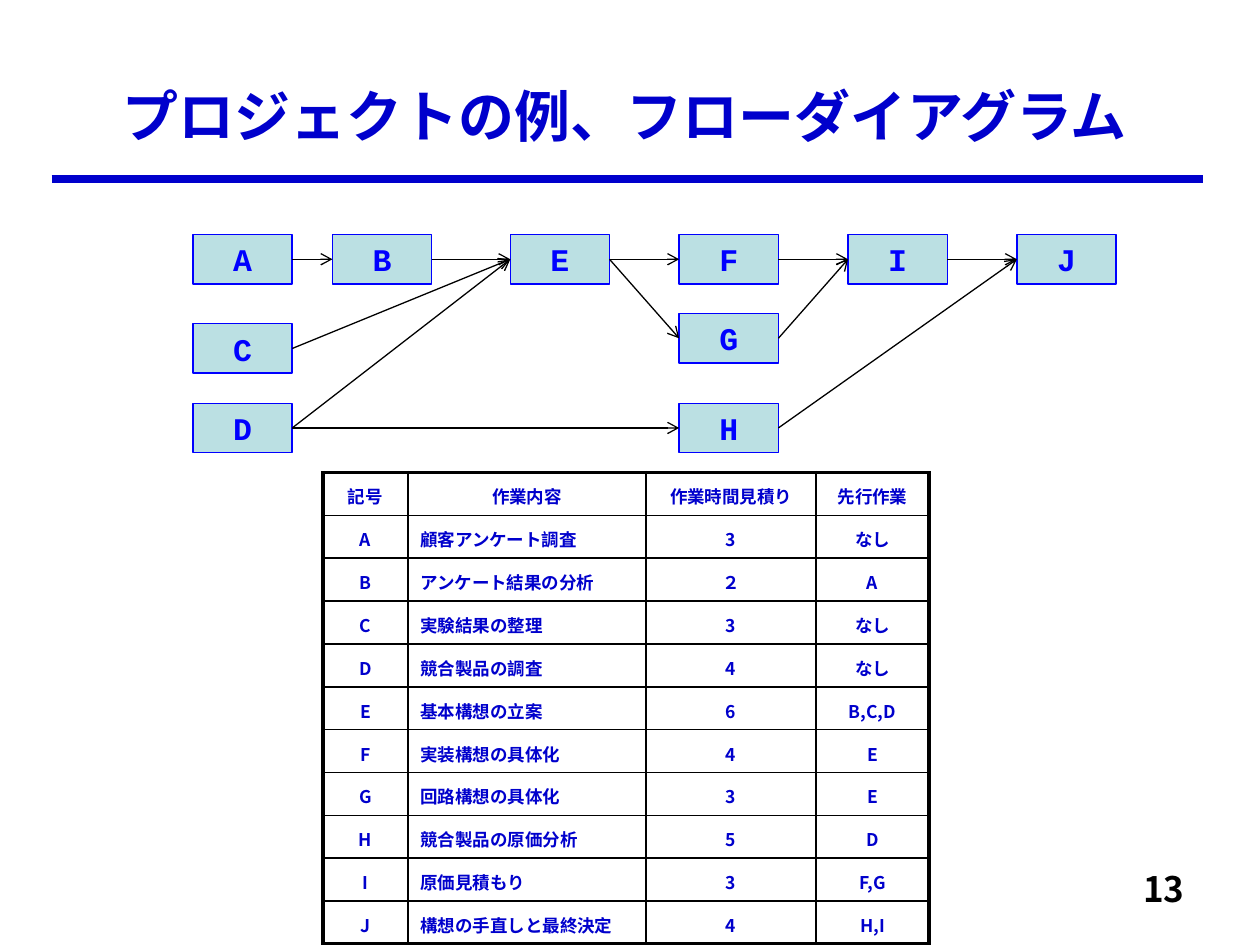
from lxml import etree
from pptx import Presentation, util as u
from pptx.dml.color import RGBColor
from pptx.enum import shapes, text
from pptx.oxml import ns

COLORS = {"navy": "0000CC", "blue": "0000FF", "pale": "BBE0E3", "black": "000000"}
GOTHIC, MONO = "Noto Sans CJK JP", "Courier New"
CENTER, LEFT, RIGHT = text.PP_ALIGN.CENTER, text.PP_ALIGN.LEFT, text.PP_ALIGN.RIGHT

TOP, G_ROW, C_ROW, BOTTOM = 134, 179.2, 185, 230.4
E_LEFT, STEP = 291.6, 96.5
NODES = {
    "A": (110.3, TOP), "C": (110.3, C_ROW), "D": (110.3, BOTTOM), "B": (190, TOP),
    "E": (E_LEFT, TOP), "F": (E_LEFT + STEP, TOP), "I": (E_LEFT + 2 * STEP, TOP),
    "J": (E_LEFT + 3 * STEP, TOP), "G": (E_LEFT + STEP, G_ROW),
    "H": (E_LEFT + STEP, BOTTOM),
}
ARROWS = ["AB", "BE", "EG", "DH", "FI", "IJ", "EF", "GI", "DE", "CE", "HJ"]

COLUMN_WIDTHS = [48.6, 136.1, 97.2, 64.4]
TASKS = [
    ("記号", "作業内容", "作業時間見積り", "先行作業"),
    ("A", "顧客アンケート調査", "3", "なし"),
    ("B", "アンケート結果の分析", "２", "A"),
    ("C", "実験結果の整理", "3", "なし"),
    ("D", "競合製品の調査", "4", "なし"),
    ("E", "基本構想の立案", "6", "B,C,D"),
    ("F", "実装構想の具体化", "4", "E"),
    ("G", "回路構想の具体化", "3", "E"),
    ("H", "競合製品の原価分析", "5", "D"),
    ("I", "原価見積もり", "3", "F,G"),
    ("J", "構想の手直しと最終決定", "4", "H,I"),
]


def rgb(name):
    return RGBColor.from_string(COLORS[name])


def add_child(parent, tag, **attributes):
    return etree.SubElement(parent, ns.qn(tag), **attributes)


class Sheet:
    """The current page and the look shared by its elements."""

    node_size = (56.7, 28.3)
    row_height = 24.5
    thin, thick = 1, 2.25

    def __init__(self, page):
        self.page = page

    def add_words(self, frame, words, size, color, font=GOTHIC, align=CENTER):
        para = frame.paragraphs[0]
        para.alignment = align
        span = para.add_run()
        span.text = words
        span.font.name = font
        span.font.size = u.Pt(size)
        span.font.bold = True
        span.font.color.rgb = rgb(color)
        add_child(span.font._element, "a:ea", typeface=font)
        return para

    def title(self, words, left, top, width, height):
        box = self.page.shapes.title
        box.left, box.top = u.Pt(left), u.Pt(top)
        box.width, box.height = u.Pt(width), u.Pt(height)
        box.text_frame.auto_size = text.MSO_AUTO_SIZE.NONE
        box.text_frame.vertical_anchor = text.MSO_ANCHOR.MIDDLE
        self.add_words(box.text_frame, words, 32, "navy")

    def label(self, words, left, top, width, height):
        box = self.page.shapes.add_textbox(*map(u.Pt, (left, top, width, height)))
        box.text_frame.word_wrap = True
        self.add_words(box.text_frame, words, 20, "black", align=RIGHT)

    def line(self, start, end, color, width):
        link = self.page.shapes.add_connector(
            shapes.MSO_CONNECTOR.STRAIGHT, *map(u.Pt, (*start, *end)))
        link.line.color.rgb = rgb(color)
        link.line.width = u.Pt(width)
        add_child(link._element.spPr, "a:effectLst")
        return link

    def node(self, name, left, top):
        box = self.page.shapes.add_shape(
            shapes.MSO_SHAPE.RECTANGLE, *map(u.Pt, (left, top, *self.node_size)))
        box.shadow.inherit = False
        box.fill.solid()
        box.fill.fore_color.rgb = rgb("pale")
        box.line.color.rgb = rgb("blue")
        box.line.width = u.Pt(0.75)
        box.text_frame.word_wrap = False
        box.text_frame.vertical_anchor = text.MSO_ANCHOR.MIDDLE
        self.add_words(box.text_frame, name, 18, "blue", MONO)
        return box

    def arrow(self, source, target):
        """Join the right side of one node to the left side of another."""
        link = self.line((0, 0), (0, 0), "black", 0.75)
        link.begin_connect(source, 3)
        link.end_connect(target, 1)
        add_child(link.line._get_or_add_ln(), "a:tailEnd", type="arrow")

    def border(self, cell, edges):
        """Draw the cell's sides; edges maps L, R, T, B to whether it is outer."""
        properties = cell._tc.get_or_add_tcPr()
        for index, (side, outer) in enumerate(edges.items()):
            width = u.Pt(self.thick if outer else self.thin)
            edge = etree.Element(ns.qn(f"a:ln{side}"), w=str(width))
            add_child(add_child(edge, "a:solidFill"), "a:srgbClr", val=COLORS["black"])
            properties.insert(index, edge)

    def table(self, rows, widths, left, top):
        size = (sum(widths), self.row_height * len(rows))
        grid = self.page.shapes.add_table(
            len(rows), len(widths), *map(u.Pt, (left, top, *size))).table
        grid.first_row = grid.horz_banding = False
        for column, width in zip(grid.columns, widths):
            column.width = u.Pt(width)
        last_row, last_column = len(rows) - 1, len(widths) - 1
        for r, row in enumerate(rows):
            grid.rows[r].height = u.Pt(self.row_height)
            for c, words in enumerate(row):
                cell = grid.cell(r, c)
                cell.fill.background()
                align = LEFT if c == 1 and r > 0 else CENTER
                para = self.add_words(cell.text_frame, words, 10, "navy", align=align)
                para.line_spacing = 1.2
                self.border(cell, {"L": c == 0, "R": c == last_column,
                                   "T": r == 0, "B": r == last_row})


def main():
    deck = Presentation()
    deck.slide_width, deck.slide_height = u.Pt(720), u.Pt(540)
    sheet = Sheet(deck.slides.add_slide(deck.slide_layouts[5]))
    sheet.line((29.5, 102.4), (687.6, 102.4), "navy", 4.5)
    sheet.label("13", 534, 492, 150, 36)
    sheet.title("プロジェクトの例、フローダイアグラム", 36.7, 36, 641, 60)
    sheet.table(TASKS, COLUMN_WIDTHS, 184.5, 270)
    nodes = {name: sheet.node(name, *place) for name, place in NODES.items()}
    for source, target in ARROWS:
        sheet.arrow(nodes[source], nodes[target])
    deck.save("out.pptx")


if __name__ == "__main__":
    main()
